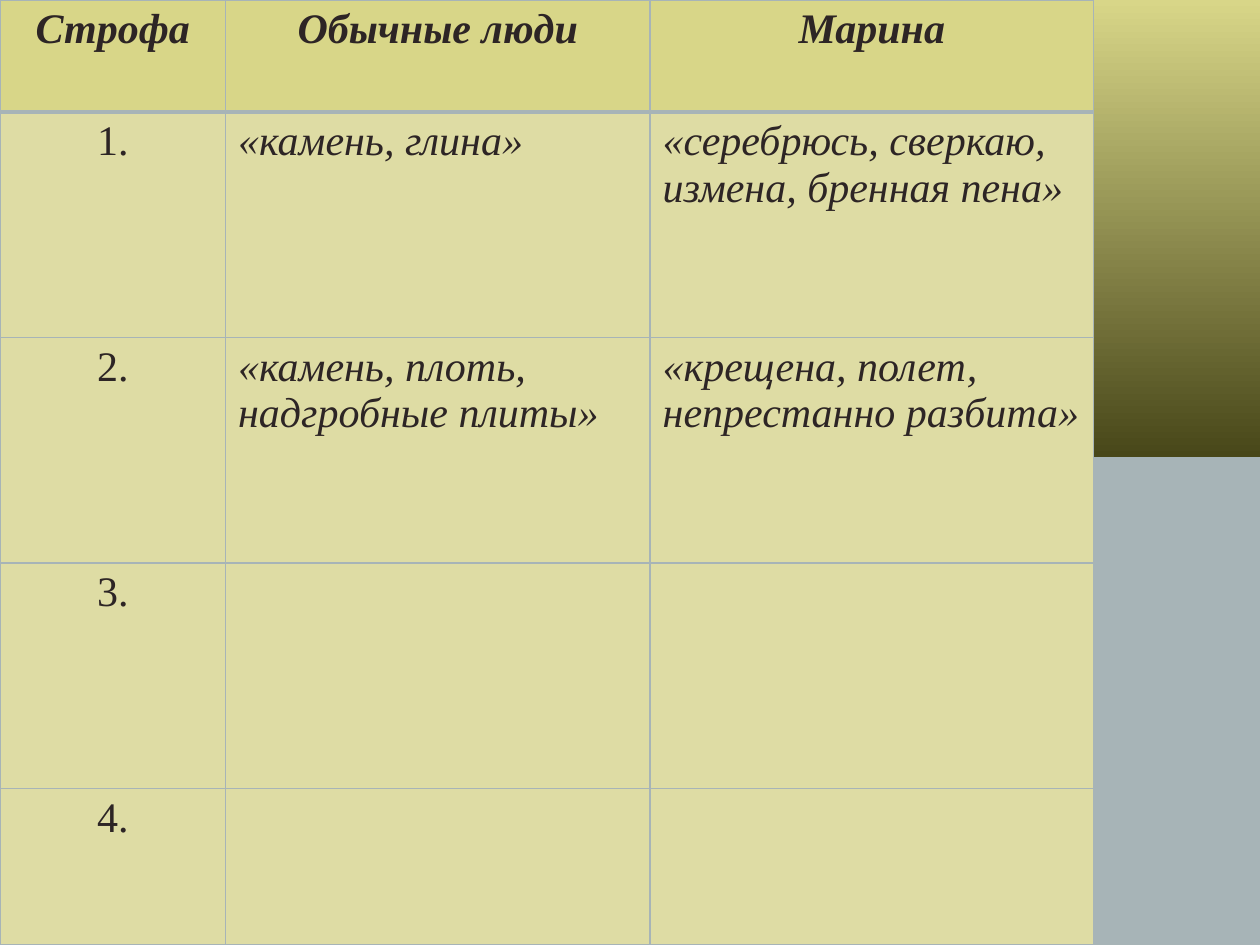
from lxml.etree import SubElement
from pptx import Presentation
from pptx.dml.color import RGBColor
from pptx.enum.shapes import MSO_SHAPE
from pptx.enum.text import PP_ALIGN
from pptx.oxml.ns import qn
from pptx.util import Inches, Pt

ROWS = [
    ("Строфа", "Обычные люди", "Марина"),
    ("1.", "«камень, глина»", "«серебрюсь, сверкаю, измена, бренная пена»"),
    ("2.", "«камень, плоть, надгробные плиты»", "«крещена, полет, непрестанно разбита»"),
    ("3.", "", ""),
    ("4.", "", ""),
]
WIDTHS = [1.79, 3.37, 3.52]
HEIGHTS = [0.89, 1.79, 1.79, 1.79, 1.24]
FONT = "Times New Roman"
GREY = RGBColor(0xA7, 0xB4, 0xB7)
GOLD = RGBColor(0xD8, 0xD6, 0x88)
OLIVE = RGBColor(0x48, 0x47, 0x19)
CREAM = RGBColor(0xDE, 0xDC, 0xA4)
INK = RGBColor(0x2D, 0x25, 0x25)


def add_edge(cell, side, width):
    props = cell._tc.get_or_add_tcPr()
    line = SubElement(props, qn(f"a:{side}"), w=str(Pt(width)))
    fill = SubElement(line, qn("a:solidFill"))
    SubElement(fill, qn("a:srgbClr"), val=str(GREY))


def fill_cell(cell, text, row, col):
    head = row == 0
    for side in ("lnL", "lnR", "lnT", "lnB"):
        thick = (head and side == "lnB") or (row == 1 and side == "lnT")
        add_edge(cell, side, 3 if thick else 1)
    cell.fill.solid()
    cell.fill.fore_color.rgb = GOLD if head else CREAM
    if not text:
        return
    para = cell.text_frame.paragraphs[0]
    para.alignment = PP_ALIGN.CENTER if head or col == 0 else PP_ALIGN.LEFT
    run = para.add_run()
    run.text = text
    font = run.font
    font.name = FONT
    font.size = Pt(24)
    font.bold = head
    font.italic = head or col > 0
    font.color.rgb = INK


def add_band(slide):
    band = slide.shapes.add_shape(
        MSO_SHAPE.RECTANGLE, Inches(8.65), 0, Inches(1.35), Inches(3.63))
    band.shadow.inherit = False
    band.line.fill.background()
    band.fill.gradient()
    band.fill.gradient_angle = 270
    for stop, color, place in zip(band.fill.gradient_stops, (GOLD, OLIVE), (0, 1)):
        stop.color.rgb = color
        stop.position = place


def add_grid(slide):
    table = slide.shapes.add_table(
        len(ROWS), len(WIDTHS), 0, 0,
        Inches(sum(WIDTHS)), Inches(sum(HEIGHTS))).table
    for col, width in zip(table.columns, WIDTHS):
        col.width = Inches(width)
    for row, height in zip(table.rows, HEIGHTS):
        row.height = Inches(height)
    for r, texts in enumerate(ROWS):
        for c, text in enumerate(texts):
            fill_cell(table.cell(r, c), text, r, c)


def main():
    deck = Presentation()
    deck.slide_width, deck.slide_height = Inches(10), Inches(7.5)
    slide = deck.slides.add_slide(deck.slide_layouts[6])
    slide.background.fill.solid()
    slide.background.fill.fore_color.rgb = GREY
    add_band(slide)
    add_grid(slide)
    deck.save("out.pptx")


if __name__ == "__main__":
    main()
